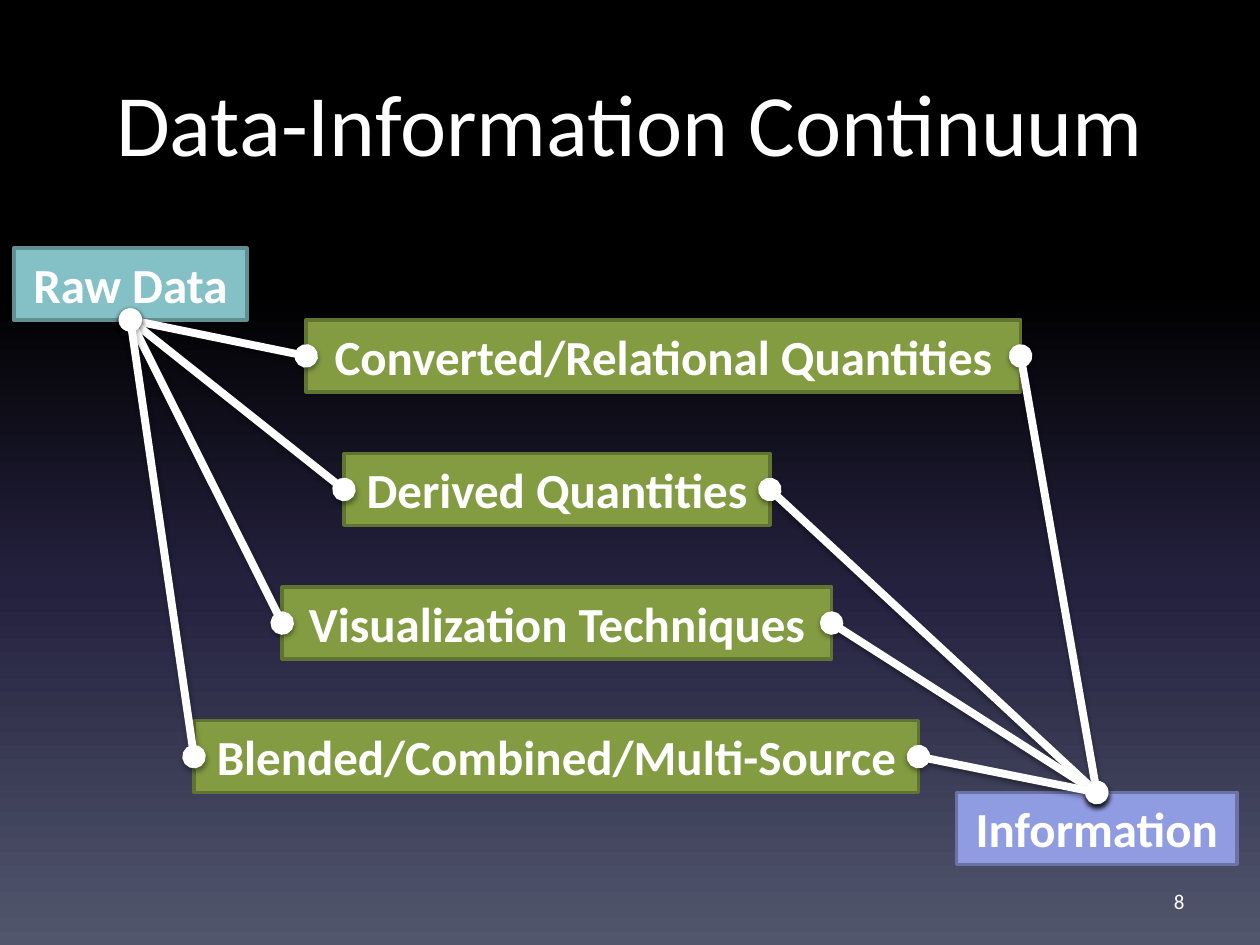
from lxml import etree
from pptx import Presentation
from pptx.dml.color import RGBColor
from pptx.enum.shapes import MSO_CONNECTOR as Connector, MSO_SHAPE as Shape
from pptx.enum.text import MSO_ANCHOR as Anchor, MSO_AUTO_SIZE as AutoSize, PP_ALIGN as Align
from pptx.oxml import parse_xml
from pptx.oxml.ns import nsdecls
from pptx.util import Inches, Pt

WHITE = "FFFFFF"
BOTTOM, LEFT, RIGHT, TOP = 2, 1, 3, 0


def color(value):
    return RGBColor.from_string(value)


def write(shape, text, size, bold=False, align=Align.CENTER, anchor=Anchor.TOP,
          wrap=True, auto_size=AutoSize.NONE):
    frame = shape.text_frame
    frame.word_wrap = wrap
    frame.auto_size = auto_size
    frame.vertical_anchor = anchor
    paragraph = frame.paragraphs[0]
    paragraph.alignment = align
    run = paragraph.add_run()
    run.text = text
    run.font.name = "Calibri"
    run.font.size = Pt(size)
    run.font.bold = bold
    run.font.color.rgb = color(WHITE)


presentation = Presentation()
presentation.slide_width = Inches(10)
presentation.slide_height = Inches(7.5)
slide = presentation.slides.add_slide(presentation.slide_layouts[5])

# Background: four-stop gradient running down the slide
fill = slide.background.fill
fill.gradient()
fill.gradient_angle = 270
stop_list = slide.element.xpath(".//p:bg//a:gsLst")[0]
for stop in list(stop_list):
    stop_list.remove(stop)
for position, value in [(0, "000000"), (31, "000000"), (62, "24213E"), (100, "51566D")]:
    stop_list.append(parse_xml(
        f'<a:gs {nsdecls("a")} pos="{position * 1000}"><a:srgbClr val="{value}"/></a:gs>'))

# Title
title = slide.shapes.title
title.left, title.top, title.width, title.height = (
    Inches(0.5), Inches(0.5), Inches(9), Inches(1.25))
write(title, "Data-Information Continuum", 50)

# Boxes: both ends of the continuum, then the steps between at equal spacing
GREEN = ("839C41", "617330")
steps = [
    ("Converted/Relational Quantities", 2.43, 5.67),
    ("Derived Quantities", 2.73, 3.38),
    ("Visualization Techniques", 2.24, 4.36),
    ("Blended/Combined/Multi-Source", 1.54, 5.75),
]
boxes = [
    ("Raw Data", 0.11, 1.97, 1.85, ("83C1C6", "618F92")),
    ("Information", 7.59, 6.29, 2.23, ("909CE1", "6B73A6")),
]
boxes += [(text, left, 2.54 + 1.06 * row, width, GREEN)
          for row, (text, left, width) in enumerate(steps)]

shapes = []
for text, left, top, width, (fill_color, line_color) in boxes:
    box = slide.shapes.add_shape(Shape.RECTANGLE, Inches(left), Inches(top),
                                 Inches(width), Inches(0.57))
    box.shadow.inherit = False
    box.fill.solid()
    box.fill.fore_color.rgb = color(fill_color)
    box.line.color.rgb = color(line_color)
    box.line.width = Pt(2)
    write(box, text, 28, bold=True, wrap=False, auto_size=AutoSize.SHAPE_TO_FIT_TEXT)
    shapes.append(box)
raw_data, information, *step_boxes = shapes

# Lines from raw data to every step, and from every step to information
links = [(raw_data, BOTTOM, step, LEFT) for step in step_boxes]
links += [(step, RIGHT, information, TOP) for step in step_boxes]
for start, start_side, end, end_side in links:
    connector = slide.shapes.add_connector(Connector.STRAIGHT, 0, 0, 0, 0)
    connector.begin_connect(start, start_side)
    connector.end_connect(end, end_side)
    connector.line.color.rgb = color(WHITE)
    connector.line.width = Pt(4.5)
    properties = connector.element.spPr
    outline = connector.line._get_or_add_ln()
    for tag in ("headEnd", "tailEnd"):
        outline.append(parse_xml(f'<a:{tag} {nsdecls("a")} type="oval"/>'))
    properties.append(parse_xml(
        f'<a:effectLst {nsdecls("a")}>'
        f'<a:outerShdw blurRad="{Pt(3.1)}" dist="{Pt(1.6)}" dir="5400000" rotWithShape="0">'
        '<a:srgbClr val="000000"><a:alpha val="38000"/></a:srgbClr>'
        '</a:outerShdw></a:effectLst>'))

# Slide number
number = slide.shapes.add_textbox(Inches(7.17), Inches(6.95), Inches(2.33), Inches(0.4))
write(number, "8", 12, align=Align.RIGHT, anchor=Anchor.MIDDLE)

presentation.save("out.pptx")
